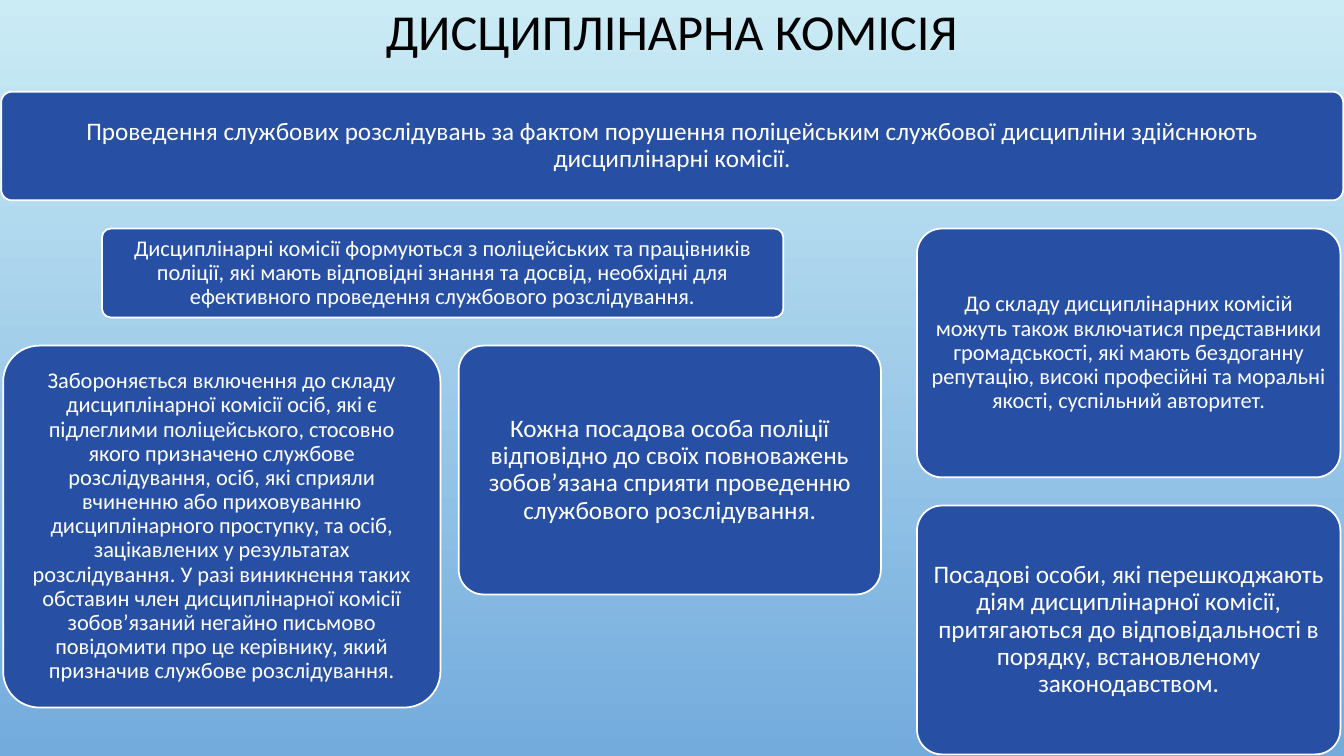
from pptx import Presentation
from pptx.dml.color import RGBColor
from pptx.enum.shapes import MSO_SHAPE
from pptx.enum.text import MSO_ANCHOR, PP_ALIGN
from pptx.util import Cm, Pt

BLUE = RGBColor(0x27, 0x4F, 0xA4)
WHITE = RGBColor(0xFF, 0xFF, 0xFF)
BLACK = RGBColor(0, 0, 0)
SKY = RGBColor(0xCB, 0xEC, 0xF5)
DUSK = RGBColor(0x73, 0xAB, 0xDD)

WIDTH, HEIGHT = Cm(33.87), Cm(19.05)
GAP = Cm(0.71)
INSET = Cm(0.18)

TITLE = "ДИСЦИПЛІНАРНА КОМІСІЯ"
DUTY = ("Проведення службових розслідувань за фактом порушення поліцейським "
        "службової дисципліни здійснюють дисциплінарні комісії.")
STAFF = ("Дисциплінарні комісії формуються з поліцейських та працівників поліції, "
         "які мають відповідні знання та досвід, необхідні для ефективного "
         "проведення службового розслідування.")
BAN = ("Забороняється включення до складу дисциплінарної комісії осіб, які є "
       "підлеглими поліцейського, стосовно якого призначено службове "
       "розслідування, осіб, які сприяли вчиненню або приховуванню "
       "дисциплінарного проступку, та осіб, зацікавлених у результатах "
       "розслідування. У разі виникнення таких обставин член дисциплінарної "
       "комісії зобов’язаний негайно письмово повідомити про це керівнику, "
       "який призначив службове розслідування.")
HELP = ("Кожна посадова особа поліції відповідно до своїх повноважень "
        "зобов’язана сприяти проведенню службового розслідування.")
PUBLIC = ("До складу дисциплінарних комісій можуть також включатися представники "
          "громадськості, які мають бездоганну репутацію, високі професійні та "
          "моральні якості, суспільний авторитет.")
BLAME = ("Посадові особи, які перешкоджають діям дисциплінарної комісії, "
         "притягаються до відповідальності в порядку, встановленому "
         "законодавством.")


def write(shape, text, size, color):
    frame = shape.text_frame
    frame.text = text
    frame.word_wrap = True
    frame.vertical_anchor = MSO_ANCHOR.MIDDLE
    para = frame.paragraphs[0]
    para.alignment = PP_ALIGN.CENTER
    para.line_spacing = 0.9
    style = {"name": "Calibri", "size": Pt(size)}
    for key, value in style.items():
        setattr(para.font, key, value)
    para.font.color.rgb = color
    return frame


def add_card(slide, box, text, size):
    card = slide.shapes.add_shape(MSO_SHAPE.ROUNDED_RECTANGLE, *box)
    card.adjustments[0] = 0.1
    card.shadow.inherit = False
    card.fill.solid()
    card.fill.fore_color.rgb = BLUE
    card.line.color.rgb = WHITE
    card.line.width = Pt(1.25)
    frame = write(card, text, size, WHITE)
    for side in ("left", "top", "right", "bottom"):
        setattr(frame, f"margin_{side}", INSET)


def add_title(slide, box):
    title = slide.shapes.title
    for key, value in zip(("left", "top", "width", "height"), box):
        setattr(title, key, value)
    write(title, TITLE, 36, BLACK)


def add_left(slide, left, top):
    """Place the staff card with the ban and help cards under it."""
    high = Cm(2.24)
    add_card(slide, (left + Cm(2.49), top, Cm(17.17), high), STAFF, 16)
    low = top + high + GAP
    add_card(slide, (left, low, Cm(11.02), Cm(9.12)), BAN, 16)
    add_card(slide, (left + Cm(11.48), low, Cm(10.64), Cm(6.27)), HELP, 18)


def add_right(slide, left, top):
    """Stack the public and blame cards."""
    high = Cm(6.27)
    for row, (text, size) in enumerate(((PUBLIC, 16), (BLAME, 18))):
        box = (left, top + row * (high + GAP), Cm(10.67), high)
        add_card(slide, box, text, size)


def paint(slide):
    fill = slide.background.fill
    fill.gradient()
    fill.gradient_angle = 270
    for stop, color, place in zip(fill.gradient_stops, (SKY, DUSK), (0, 1)):
        stop.color.rgb = color
        stop.position = place


def main():
    deck = Presentation()
    deck.slide_width, deck.slide_height = WIDTH, HEIGHT
    slide = deck.slides.add_slide(deck.slide_layouts[5])
    paint(slide)
    add_title(slide, (Cm(2.54), 0, Cm(28.79), Cm(1.7)))
    top, high = Cm(2.31), Cm(2.74)
    add_card(slide, (Cm(0.03), top, Cm(33.82), high), DUTY, 18)
    low = top + high + GAP
    add_left(slide, Cm(0.08), low)
    add_right(slide, Cm(23.11), low)
    deck.save("out.pptx")


if __name__ == "__main__":
    main()
